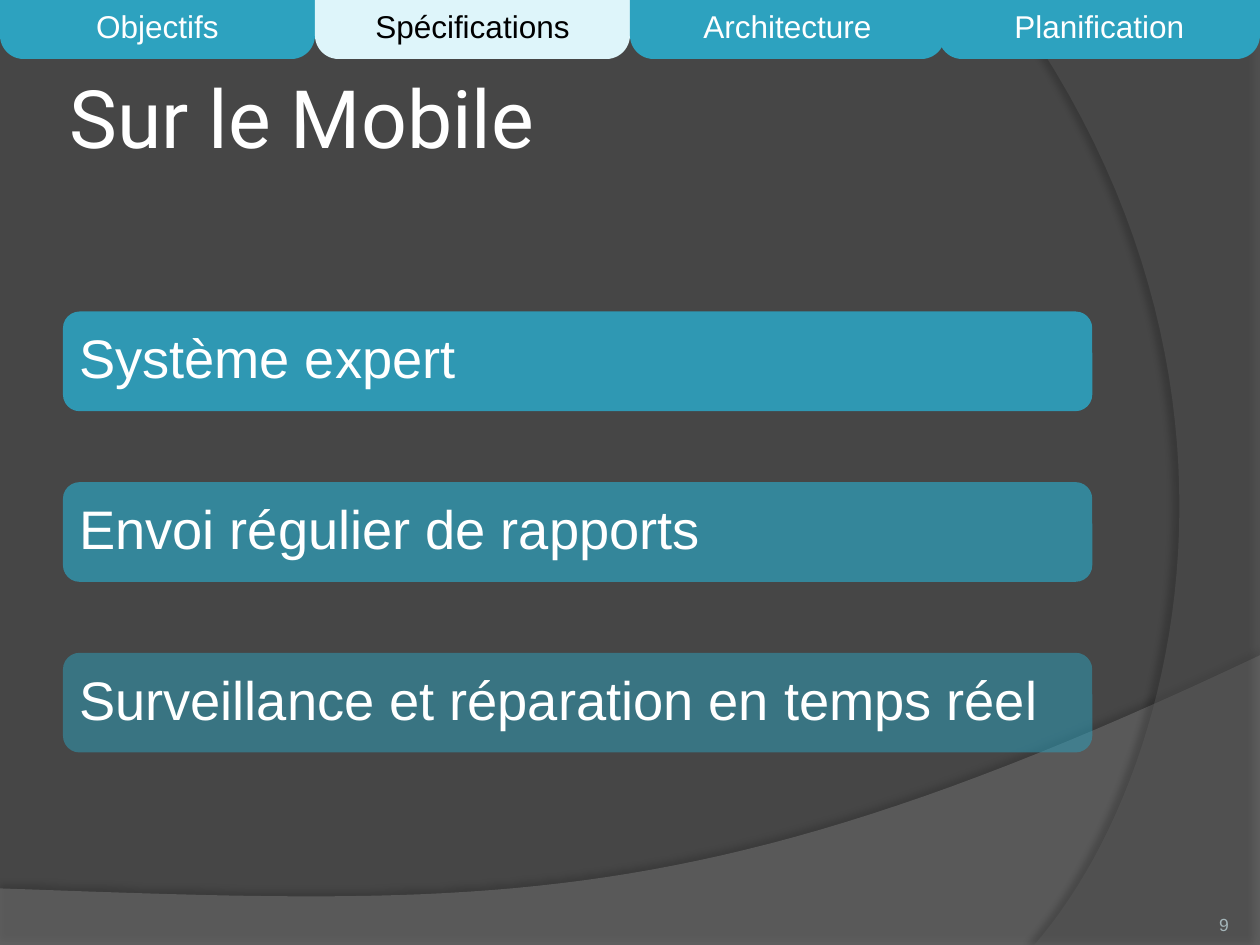
import lxml.etree
import pptx
import pptx.dml.color
import pptx.enum.shapes
import pptx.enum.text
import pptx.oxml.ns
import pptx.util

Cm = pptx.util.Cm
Pt = pptx.util.Pt
Kind = pptx.enum.shapes.MSO_SHAPE
Align = pptx.enum.text.PP_ALIGN
Anchor = pptx.enum.text.MSO_ANCHOR

WIDE, HIGH = 25.4, 19.05
TEAL, PALE, WHITE, BLACK = "2DA2BF", "DEF5FA", "FFFFFF", "000000"
TABS = ["Objectifs", "Spécifications", "Architecture", "Planification"]
ACTIVE = "Spécifications"
BARS = [
    ("Système expert", 90),
    ("Envoi régulier de rapports", 70),
    ("Surveillance et réparation en temps réel", 50),
]


def rgb(code):
    return pptx.dml.color.RGBColor.from_string(code)


def add_node(base, tag, **attrs):
    node = lxml.etree.SubElement(base, pptx.oxml.ns.qn(tag))
    for name, value in attrs.items():
        node.set(name, str(value))
    return node


def paint(shape, code, alpha=100):
    """Fill a shape, with no line and no shadow."""
    shape.shadow.inherit = False
    shape.line.fill.background()
    shape.fill.solid()
    shape.fill.fore_color.rgb = rgb(code)
    if alpha < 100:
        color = shape.element.spPr.find(".//" + pptx.oxml.ns.qn("a:srgbClr"))
        add_node(color, "a:alpha", val=alpha * 1000)


def write(shape, text, size, code, align=Align.LEFT, font="Arial",
          anchor=Anchor.MIDDLE, inset=0.0):
    frame = shape.text_frame
    frame.word_wrap = True
    frame.vertical_anchor = anchor
    frame.margin_left = frame.margin_right = Cm(inset)
    frame.margin_top = frame.margin_bottom = Cm(inset)
    line = frame.paragraphs[0]
    line.text = text
    line.alignment = align
    line.font.name = font
    line.font.size = Pt(size)
    line.font.color.rgb = rgb(code)
    return line


def curve(start, pull, push, end, steps=48):
    """Points along a cubic curve."""
    points = []
    for step in range(steps + 1):
        t = step / steps
        u = 1 - t
        points.append(tuple(
            u**3 * a + 3 * u**2 * t * b + 3 * u * t**2 * c + t**3 * d
            for a, b, c, d in zip(start, pull, push, end)))
    return points


def add_sweep(slide, points, code, alpha, shade, drop, angle):
    """Translucent outline with a soft shadow."""
    spots = [(Cm(x), Cm(y)) for x, y in points]
    pen = slide.shapes.build_freeform(*spots[0])
    pen.add_line_segments(spots[1:], close=True)
    shape = pen.convert_to_shape()
    paint(shape, code, alpha)
    effects = shape.element.spPr.find(pptx.oxml.ns.qn("a:effectLst"))
    shadow = add_node(effects, "a:outerShdw", blurRad=Pt(4), dist=Pt(drop),
                      dir=angle * 60000, algn="ctr", rotWithShape=0)
    color = add_node(shadow, "a:srgbClr", val=BLACK)
    add_node(color, "a:alpha", val=shade * 1000)


def add_back(slide):
    slide.background.fill.solid()
    slide.background.fill.fore_color.rgb = rgb("464646")
    wave = curve((WIDE, 13.21), (14.2, 18.52), (9.93, 18.26), (0, 17.91))
    add_sweep(slide, [(0, HIGH), (WIDE, HIGH)] + wave,
              "7F7F7F", 45, 35, 3.5, 270)
    arc = curve((20.85, HIGH), (23.75, 15.72), (25.86, 7.62), (20.32, 0))
    add_sweep(slide, [(WIDE, 0), (WIDE, HIGH)] + arc,
              "5E5E5E", 40, 45, 4, 180)


def add_title(slide, text):
    title = slide.shapes.title
    title.left, title.top = Cm(1.27), Cm(0.76)
    title.width, title.height = Cm(20.75), Cm(3.18)
    write(title, text, 46, WHITE, font="Roboto", inset=0.13)


def add_bar(slide, row, text, alpha):
    bar = slide.shapes.add_shape(Kind.ROUNDED_RECTANGLE, Cm(1.27),
                                 Cm(6.28 + row * 3.44), Cm(20.75), Cm(2.01))
    paint(bar, TEAL, alpha)
    line = write(bar, text, 31, WHITE, inset=0.23)
    line.line_spacing = 0.9


def add_tab(slide, index, text):
    step = WIDE / len(TABS)
    # The last tab slips a little under its neighbour's edge
    lap = 0.13 if index == len(TABS) - 1 else 0
    tab = slide.shapes.add_shape(Kind.ROUND_2_SAME_RECTANGLE,
                                 Cm(index * step - lap), 0,
                                 Cm(step + lap), Cm(1.19))
    tab.adjustments[0], tab.adjustments[1] = 0, 0.4
    active = text == ACTIVE
    paint(tab, PALE if active else TEAL)
    write(tab, text, 18, BLACK if active else WHITE, Align.CENTER, inset=0.13)


def add_page(slide, number):
    box = slide.shapes.add_textbox(Cm(22.66), Cm(17.83), Cm(2.11), Cm(1.02))
    write(box, number, 10, "A4B5B9", Align.RIGHT, anchor=Anchor.BOTTOM)


def main():
    deck = pptx.Presentation()
    deck.slide_width, deck.slide_height = Cm(WIDE), Cm(HIGH)
    slide = deck.slides.add_slide(deck.slide_layouts[5])
    add_back(slide)
    add_title(slide, "Sur le Mobile")
    # Key points, fading down the page
    for row, (text, alpha) in enumerate(BARS):
        add_bar(slide, row, text, alpha)
    add_page(slide, "9")
    # Section tabs along the top
    for index, text in enumerate(TABS):
        add_tab(slide, index, text)
    deck.save("out.pptx")


if __name__ == "__main__":
    main()
